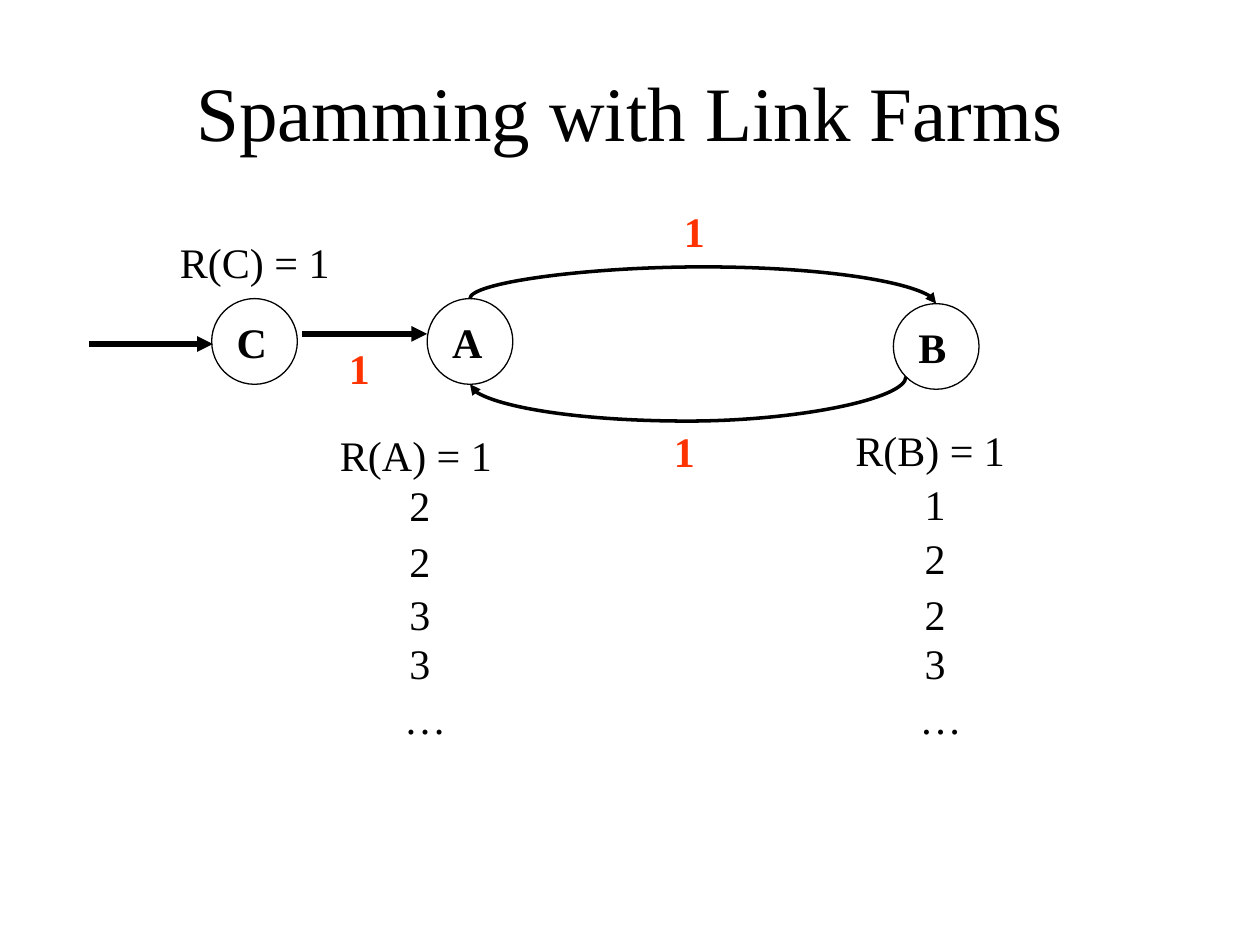
import pptx
import pptx.dml.color
import pptx.enum.shapes
import pptx.enum.text
import pptx.oxml.ns
import pptx.util
from lxml import etree
from pptx.util import Inches

rgb = pptx.dml.color.RGBColor.from_string
qn = pptx.oxml.ns.qn
ALIGN = pptx.enum.text.PP_ALIGN
ANCHOR = pptx.enum.text.MSO_ANCHOR
CONNECTOR = pptx.enum.shapes.MSO_CONNECTOR
BLACK, RED = "000000", "FF3300"


def write(s, text, size=24, color=BLACK, bold=False,
          align=ALIGN.LEFT, anchor=ANCHOR.TOP):
    tf = s.text_frame
    tf.word_wrap = True
    tf.vertical_anchor = anchor
    p = tf.paragraphs[0]
    p.alignment = align
    r = p.add_run()
    r.text = text
    r.font.name = "Times New Roman"
    r.font.size = pptx.util.Pt(size)
    r.font.bold = bold
    r.font.color.rgb = rgb(color)


def add_arrow(kind, ends, width):
    s = slide.shapes.add_connector(kind, *map(Inches, ends))
    s.line.color.rgb = rgb(BLACK)
    s.line.width = pptx.util.Pt(width)
    etree.SubElement(s.line._get_or_add_ln(), qn("a:tailEnd"), type="triangle")
    etree.SubElement(s._element.spPr, qn("a:effectLst"))
    return s


prs = pptx.Presentation()
prs.slide_width, prs.slide_height = Inches(10), Inches(7.5)
slide = prs.slides.add_slide(prs.slide_layouts[5])

title = slide.shapes.title
title.left, title.top = Inches(0.75), Inches(0.25)
title.width, title.height = Inches(8.5), Inches(1.25)
write(title, "Spamming with Link Farms", size=44,
      align=ALIGN.CENTER, anchor=ANCHOR.MIDDLE)

# Pages of the link graph
for name, x, y in [("A", 3.39, 2.37), ("C", 1.68, 2.37), ("B", 7.09, 2.41)]:
    s = slide.shapes.add_shape(pptx.enum.shapes.MSO_SHAPE.OVAL,
                               Inches(x), Inches(y), Inches(0.68), Inches(0.68))
    s.shadow.inherit = False
    s.fill.background()
    s.line.color.rgb = rgb(BLACK)
    s.line.width = pptx.util.Pt(0.75)
    write(s, name, bold=True, anchor=ANCHOR.MIDDLE)

# Curved links A to B and B to A: upright connectors turned by 90 degrees
for ends, bend in [((5.56, 4.24, 5.6, 0.54), -626100),
                   ((5.43, 1.29, 5.49, 4.75), 588200)]:
    s = add_arrow(CONNECTOR.CURVE, ends, 2)
    spPr = s._element.spPr
    spPr.find(qn("a:xfrm")).set("rot", str(90 * 60000))
    guides = spPr.find(qn("a:prstGeom")).find(qn("a:avLst"))
    etree.SubElement(guides, qn("a:gd"), name="adj1", fmla=f"val {bend}")

# Straight links into A and C
for ends in [(2.4, 2.65, 3.39, 2.65), (0.71, 2.73, 1.69, 2.73)]:
    add_arrow(CONNECTOR.STRAIGHT, ends, 3)

# Link weights, starting ranks, then the ranks of each iteration
labels = [("1", 2.67, 2.67, 0.42, RED),
          ("1", 5.25, 3.33, 0.87, RED),
          ("1", 5.33, 1.58, 0.87, RED),
          ("R(C) = 1", 1.33, 1.83, 1.57, BLACK),
          ("R(B) = 1", 6.69, 3.32, 1.57, BLACK),
          ("R(A) = 1", 2.6, 3.36, 1.57, BLACK)]
for x, ranks, tops in [(3.15, "2233", (3.76, 4.2, 4.62, 5.01)),
                       (7.24, "1223", (3.75, 4.18, 4.62, 5.01))]:
    labels += [(rank, x, y, 1.18, BLACK) for rank, y in zip(ranks, tops)]
    labels.append(("…", x - 0.04, 5.45, 1.18, BLACK))

for text, x, y, width, color in labels:
    s = slide.shapes.add_textbox(Inches(x), Inches(y), Inches(width), Inches(0.5))
    write(s, text, color=color, bold=color == RED)

prs.save("out.pptx")
